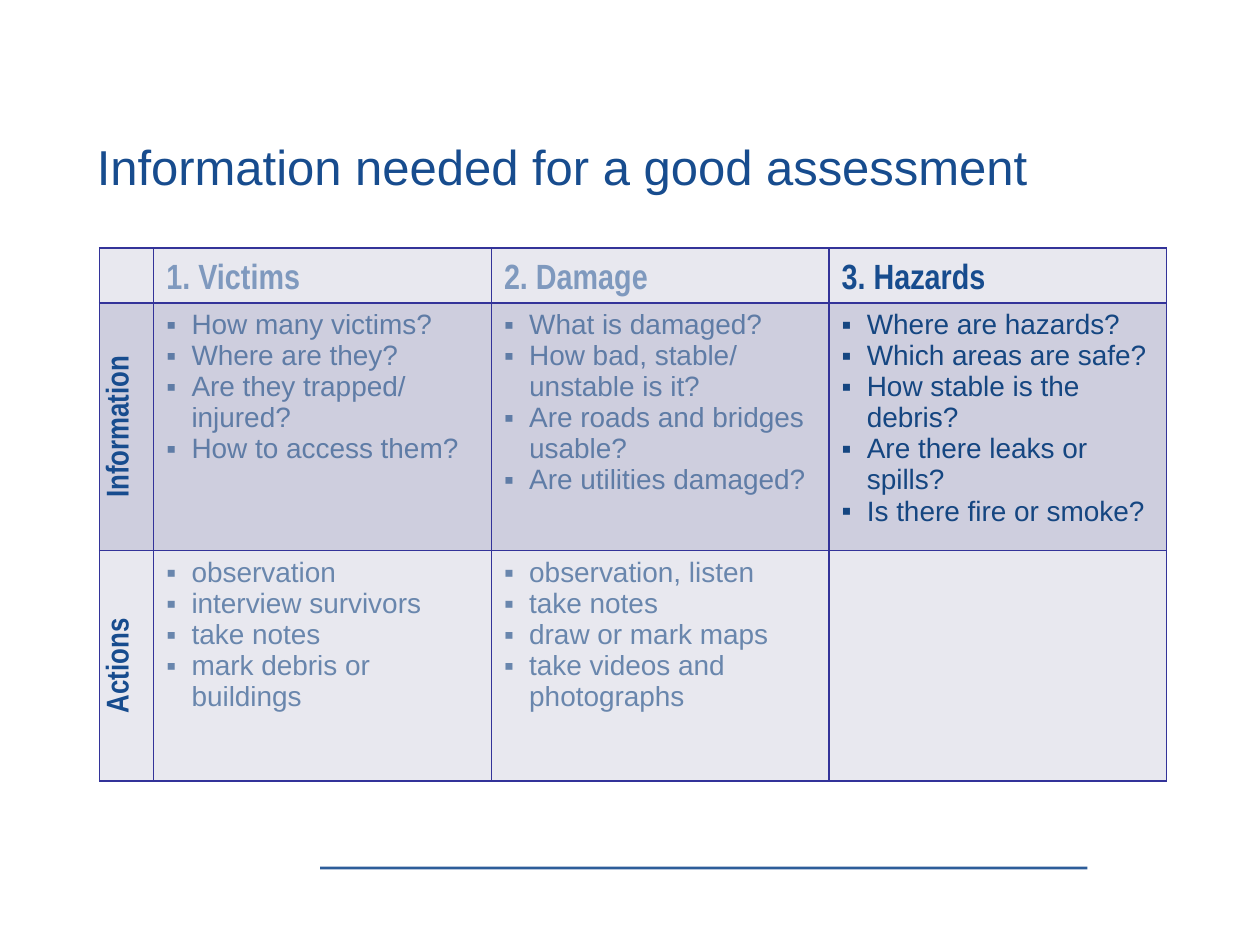
from dataclasses import dataclass

from pptx import Presentation
from pptx.dml.color import RGBColor
from pptx.enum.shapes import MSO_CONNECTOR
from pptx.enum.text import MSO_ANCHOR, PP_ALIGN
from pptx.oxml.ns import qn
from pptx.util import Inches, Pt
from lxml.etree import SubElement


@dataclass(frozen=True)
class Theme:
    blue: str = "174C8E"
    ink: str = "154681"
    edge: str = "333399"
    pale: str = "E8E8EF"
    dark: str = "CECEDE"
    sans: str = "Arial"
    narrow: str = "Arial Narrow"
    title: int = 28
    head: int = 20
    side: int = 18
    body: int = 16


HEADS = ["1. Victims", "2. Damage", "3. Hazards"]
ROWS = [
    ("Information", [
        ["How many victims?", "Where are they?", "Are they trapped/ injured?",
         "How to access them?"],
        ["What is damaged?", "How bad, stable/ unstable is it?",
         "Are roads and bridges usable?", "Are utilities damaged?"],
        ["Where are hazards?", "Which areas are safe?",
         "How stable is the debris?", "Are there leaks or spills?",
         "Is there fire or smoke?"],
    ]),
    ("Actions", [
        ["observation", "interview survivors", "take notes",
         "mark debris or buildings"],
        ["observation, listen", "take notes", "draw or mark maps",
         "take videos and photographs"],
        [],
    ]),
]
FOCUS = 3  # the column shown at full strength


def fade(color, alpha):
    """Make a solid colour element partly transparent, alpha in percent."""
    if alpha < 100:
        SubElement(color, qn("a:alpha"), val=str(alpha * 1000))


def apply(target, values):
    for name, value in values.items():
        setattr(target, name, value)


class Deck:
    def __init__(self, theme):
        self.theme = theme
        self.file = Presentation()
        apply(self.file, {"slide_width": Inches(10),
                          "slide_height": Inches(7.5)})
        self.slide = self.file.slides.add_slide(self.file.slide_layouts[6])

    def text(self, para, words, size, face, color, bold=False, alpha=100):
        run = para.add_run()
        run.text = words
        apply(run.font, {"size": Pt(size), "name": face, "bold": bold})
        run.font.color.rgb = RGBColor.from_string(color)
        fade(next(run._r.iter(qn("a:srgbClr"))), alpha)

    def title(self, words, left, top, width, height):
        box = self.slide.shapes.add_textbox(
            Inches(left), Inches(top), Inches(width), Inches(height))
        apply(box.text_frame, {
            "word_wrap": True, "margin_left": Inches(0.1),
            "margin_right": Inches(0.1), "margin_top": Inches(0.06),
            "margin_bottom": Inches(0.06)})
        look = self.theme
        self.text(box.text_frame.paragraphs[0], words,
                  look.title, look.sans, look.blue)

    def rule(self, left, right, y):
        line = self.slide.shapes.add_connector(
            MSO_CONNECTOR.STRAIGHT, Inches(left), Inches(y),
            Inches(right), Inches(y))
        line.line.width = Pt(1.6)
        line.line.color.rgb = RGBColor.from_string(self.theme.blue)
        props = line._element.spPr
        fade(next(props.iter(qn("a:srgbClr"))), 90)
        SubElement(props, qn("a:effectLst"))

    def grid(self, left, top, widths, heights):
        frame = self.slide.shapes.add_table(
            len(heights), len(widths), Inches(left), Inches(top),
            Inches(sum(widths)), Inches(sum(heights)))
        table = frame.table
        for col, width in zip(table.columns, widths):
            col.width = Inches(width)
        for row, height in zip(table.rows, heights):
            row.height = Inches(height)
        for n, row in enumerate(table.rows):
            for cell in row.cells:
                self.paint(cell, self.theme.dark if n == 1 else self.theme.pale)
        return table

    def paint(self, cell, fill):
        props = cell._tc.get_or_add_tcPr()
        for side in ("lnL", "lnR", "lnT", "lnB"):
            line = SubElement(props, qn(f"a:{side}"), w=str(Pt(1)))
            solid = SubElement(line, qn("a:solidFill"))
            SubElement(solid, qn("a:srgbClr"), val=self.theme.edge)
        cell.fill.solid()
        cell.fill.fore_color.rgb = RGBColor.from_string(fill)

    def head(self, cell, words, alpha):
        cell.vertical_anchor = MSO_ANCHOR.BOTTOM
        look = self.theme
        self.text(cell.text_frame.paragraphs[0], words,
                  look.head, look.narrow, look.blue, True, alpha)

    def side(self, cell, words):
        """Row label that reads from bottom to top."""
        cell._tc.get_or_add_tcPr().set("vert", "vert270")
        para = cell.text_frame.paragraphs[0]
        para.alignment = PP_ALIGN.CENTER
        look = self.theme
        self.text(para, words, look.side, look.narrow, look.blue, True)

    def bullets(self, cell, items, alpha):
        frame, look = cell.text_frame, self.theme
        for n, item in enumerate(items):
            para = frame.add_paragraph() if n else frame.paragraphs[0]
            props = para._p.get_or_add_pPr()
            props.set("marL", str(Inches(0.2)))
            props.set("indent", str(Inches(-0.2)))
            SubElement(props, qn("a:buFont"), typeface=look.sans)
            SubElement(props, qn("a:buChar"), char="▪")
            self.text(para, item, look.body, look.sans, look.ink, alpha=alpha)


def main():
    deck = Deck(Theme())
    deck.rule(2.54, 8.63, 6.89)
    deck.title("Information needed for a good assessment",
               0.67, 1.02, 9.08, 0.64)
    table = deck.grid(0.79, 1.97, [0.43] + [2.68] * 3, [0.41, 1.83, 1.83])
    for col, words in enumerate(HEADS, 1):
        deck.head(table.cell(0, col), words, 100 if col == FOCUS else 50)
    for row, (label, lists) in enumerate(ROWS, 1):
        deck.side(table.cell(row, 0), label)
        for col, items in enumerate(lists, 1):
            deck.bullets(table.cell(row, col), items,
                         100 if col == FOCUS else 60)
    deck.file.save("out.pptx")


if __name__ == "__main__":
    main()
